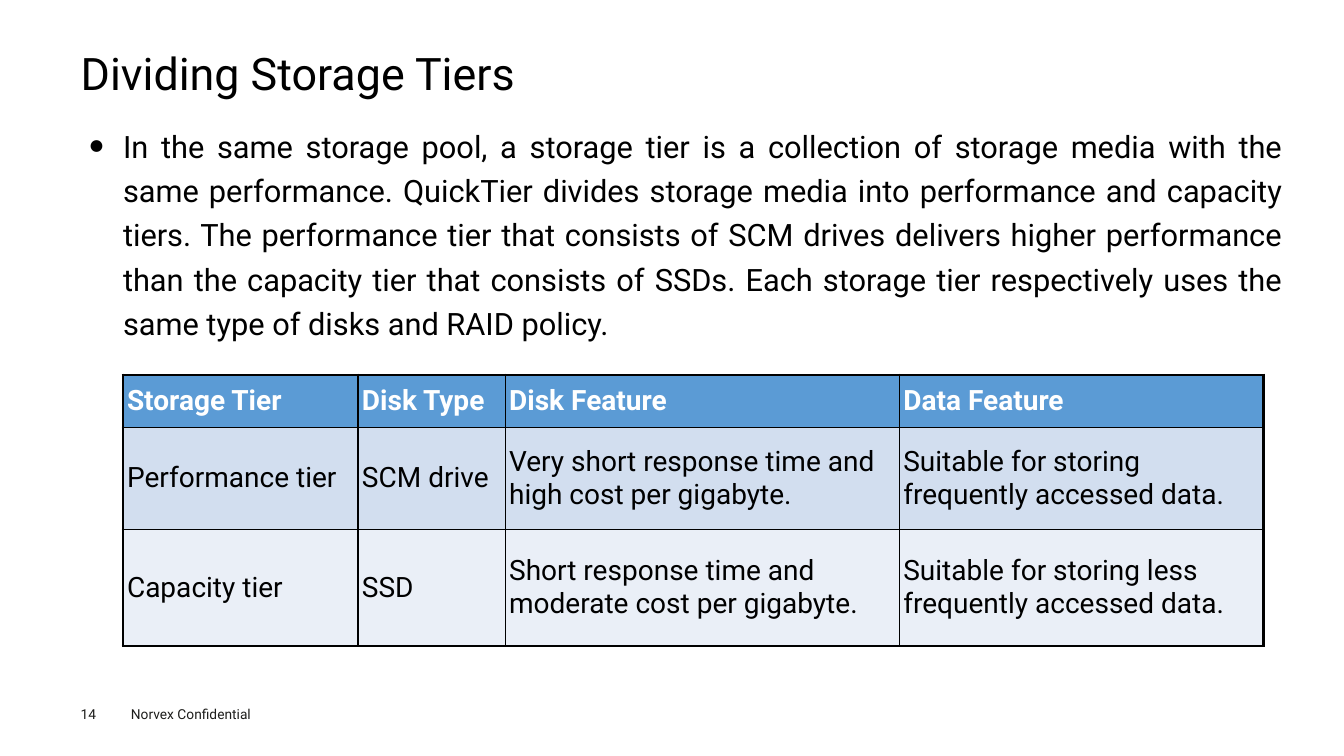
from typing import NamedTuple

from lxml.etree import SubElement
from pptx import Presentation
from pptx.dml.color import RGBColor
from pptx.enum.text import MSO_ANCHOR, PP_ALIGN
from pptx.oxml.ns import qn
from pptx.util import Inches, Pt

FONT = "Roboto"
BLACK, WHITE, FOOTER = "000000", "FFFFFF", "1D1D1B"
INNER, OUTER = 1, 2.25


class Box(NamedTuple):
    left: float
    top: float
    width: float
    height: float


class TierRow(NamedTuple):
    height: float
    fill: str
    color: str
    bold: bool
    texts: tuple[str, ...]


COLUMN_WIDTHS = (2.33, 1.46, 3.91, 3.61)
ROWS = (
    TierRow(0.52, "5B9BD5", WHITE, True,
            ("Storage Tier", "Disk Type", "Disk Feature", "Data Feature")),
    TierRow(1.01, "D2DEEF", BLACK, False,
            ("Performance tier", "SCM drive",
             "Very short response time and high cost per gigabyte.",
             "Suitable for storing frequently accessed data.")),
    TierRow(1.16, "EAEFF7", BLACK, False,
            ("Capacity tier", "SSD",
             "Short response time and moderate cost per gigabyte.",
             "Suitable for storing less frequently accessed data.")),
)
DESCRIPTION = (
    "In the same storage pool, a storage tier is a collection of storage media "
    "with the same performance. QuickTier divides storage media into performance "
    "and capacity tiers. The performance tier that consists of SCM drives delivers "
    "higher performance than the capacity tier that consists of SSDs. Each storage "
    "tier respectively uses the same type of disks and RAID policy."
)


def rgb(color: str) -> RGBColor:
    return RGBColor.from_string(color)


def write(tf, text: str, *, size: float, color: str = BLACK, bold: bool = False,
          align=PP_ALIGN.LEFT, spacing: float = 1.0):
    p = tf.paragraphs[0]
    p.alignment = align
    p.line_spacing = spacing
    r = p.add_run()
    r.text = text
    r.font.name = FONT
    r.font.size = Pt(size)
    r.font.bold = bold
    r.font.color.rgb = rgb(color)
    return p


def place(sp, box: Box) -> None:
    sp.left, sp.top, sp.width, sp.height = map(Inches, box)


def set_margins(target, x: float, y: float) -> None:
    target.margin_left = target.margin_right = Inches(x)
    target.margin_top = target.margin_bottom = Inches(y)


def add_text_frame(s, box: Box, margin_x: float, margin_y: float,
                   anchor=MSO_ANCHOR.TOP):
    tf = s.shapes.add_textbox(*map(Inches, box)).text_frame
    tf.word_wrap = True
    tf.vertical_anchor = anchor
    set_margins(tf, margin_x, margin_y)
    return tf


def add_bullet(p, indent: float) -> None:
    pPr = p._p.get_or_add_pPr()
    pPr.set("marL", str(Inches(indent)))
    pPr.set("indent", str(-Inches(indent)))
    SubElement(pPr, qn("a:buSzPct"), val="50000")
    SubElement(pPr, qn("a:buFont"), typeface=FONT)
    SubElement(pPr, qn("a:buChar"), char="●")


def set_borders(cell, widths: dict[str, float]) -> None:
    """Draw black cell edges; must run before the cell's fill is set."""
    tcPr = cell._tc.get_or_add_tcPr()
    for edge, width in widths.items():
        ln = SubElement(tcPr, qn(f"a:{edge}"), w=str(Pt(width)))
        fill = SubElement(ln, qn("a:solidFill"))
        SubElement(fill, qn("a:srgbClr"), val=BLACK)


def add_tier_table(s, left: float, top: float) -> None:
    size = sum(COLUMN_WIDTHS), sum(row.height for row in ROWS)
    table = s.shapes.add_table(len(ROWS), len(COLUMN_WIDTHS),
                               *map(Inches, (left, top, *size))).table
    for column, width in zip(table.columns, COLUMN_WIDTHS):
        column.width = Inches(width)
    last_row, last_col = len(ROWS) - 1, len(COLUMN_WIDTHS) - 1
    for i, row in enumerate(ROWS):
        table.rows[i].height = Inches(row.height)
        for j, text in enumerate(row.texts):
            cell = table.cell(i, j)
            set_borders(cell, {
                "lnL": OUTER if j == 0 else INNER,
                "lnR": OUTER if j == last_col else INNER,
                "lnT": OUTER if i == 0 else INNER,
                "lnB": OUTER if i == last_row else INNER,
            })
            cell.fill.solid()
            cell.fill.fore_color.rgb = rgb(row.fill)
            cell.vertical_anchor = MSO_ANCHOR.MIDDLE
            set_margins(cell, 0.04, 0.04)
            write(cell.text_frame, text, size=20, color=row.color, bold=row.bold)


def main() -> None:
    prs = Presentation()
    prs.slide_width, prs.slide_height = Inches(13.33), Inches(7.5)
    s = prs.slides.add_slide(prs.slide_layouts[5])

    title = s.shapes.title
    place(title, Box(0.8, 0.49, 11.73, 0.53))
    set_margins(title.text_frame, 0, 0)
    title.text_frame.vertical_anchor = MSO_ANCHOR.MIDDLE
    write(title.text_frame, "Dividing Storage Tiers", size=32, spacing=0.9)

    body = add_text_frame(s, Box(0.8, 1.15, 12.01, 2.3), 0.09, 0.04)
    p = write(body, DESCRIPTION, size=22, align=PP_ALIGN.JUSTIFY, spacing=1.2)
    add_bullet(p, 0.33)

    add_tier_table(s, 1.22, 3.72)

    number = add_text_frame(s, Box(0.8, 7, 0.55, 0.16), 0, 0, MSO_ANCHOR.MIDDLE)
    write(number, "14", size=9.8, color=FOOTER)
    notice = add_text_frame(s, Box(1.2, 6.95, 1.6, 0.27), 0.1, 0.05, MSO_ANCHOR.MIDDLE)
    write(notice, "Norvex Confidential", size=9.8, color=FOOTER)

    prs.save("out.pptx")


if __name__ == "__main__":
    main()
